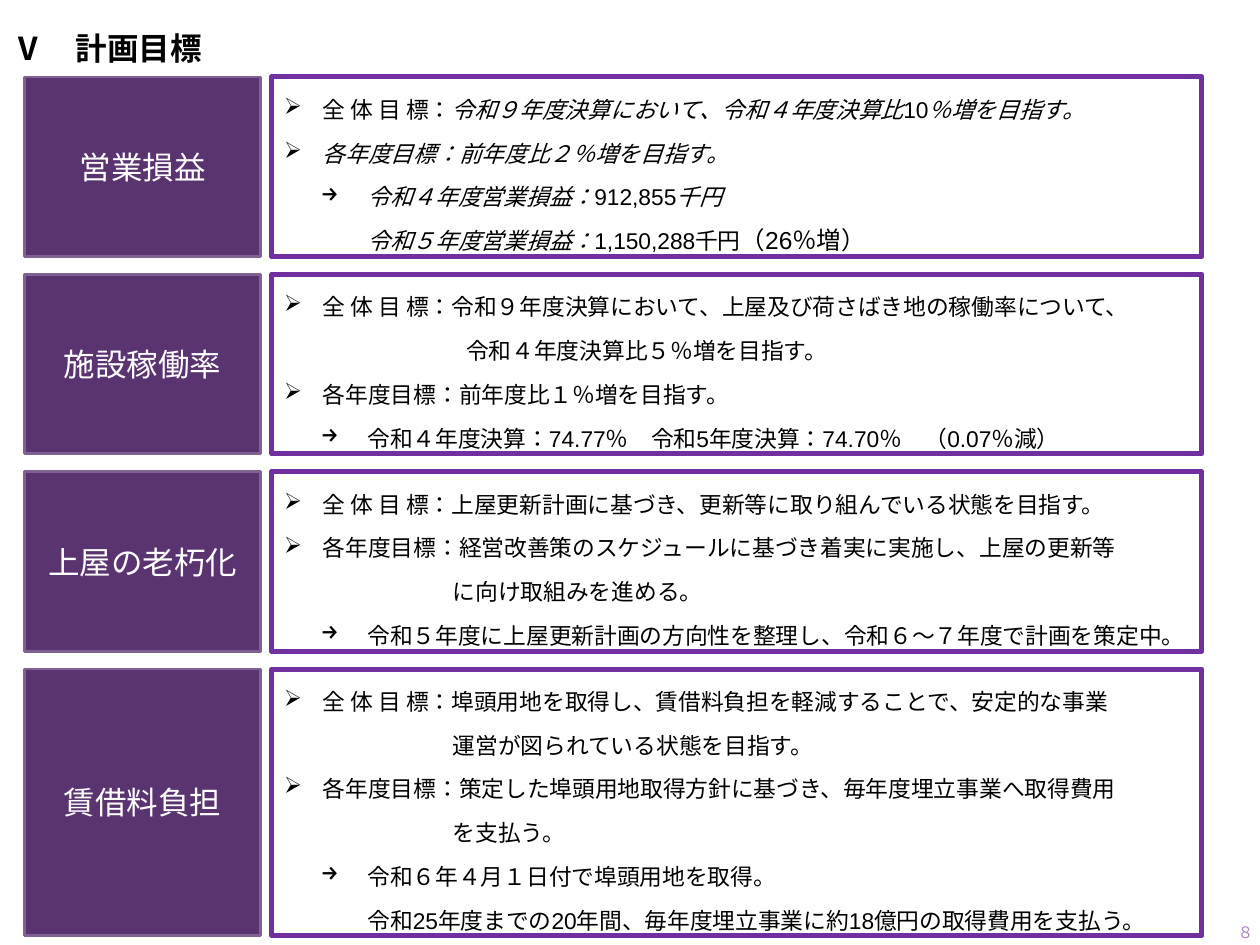
"""Build the plan targets slide: four topic labels, each beside a framed list of goals."""
from lxml.etree import SubElement
from pptx import Presentation
from pptx.dml.color import RGBColor
from pptx.enum.lang import MSO_LANGUAGE_ID
from pptx.enum.shapes import MSO_SHAPE
from pptx.enum.text import MSO_ANCHOR, MSO_AUTO_SIZE, PP_ALIGN
from pptx.oxml.ns import qn
from pptx.util import Cm, Pt

TITLE = "Ⅴ　計画目標"
PAGE_NUMBER = "８"
TOPICS = [
    {"label": "営業損益", "height": 3.62, "lines": [
        ("goal", [("全 体 目 標：", "body"),
                  ("令和９年度決算において、令和４年度決算比", "italic"),
                  ("10", "body"), ("％増を目指す。", "italic")]),
        ("goal", [("各年度目標：前年度比２％増を目指す。", "italic")]),
        ("step", [("令和４年度営業損益：", "italic"), ("912,855", "body"),
                  ("千円", "italic")]),
        ("more", [("令和５年度営業損益：", "italic"),
                  ("1,150,288千円", "body"), ("（26％増）", "large")]),
    ]},
    {"label": "施設稼働率", "height": 3.62, "lines": [
        ("goal", "全 体 目 標：令和９年度決算において、上屋及び荷さばき地の稼働率について、"),
        ("deep", "令和４年度決算比５％増を目指す。"),
        ("goal", "各年度目標：前年度比１％増を目指す。"),
        ("step", "令和４年度決算：74.77％　令和5年度決算：74.70％　（0.07％減）"),
    ]},
    {"label": "上屋の老朽化", "height": 3.62, "lines": [
        ("goal", "全 体 目 標：上屋更新計画に基づき、更新等に取り組んでいる状態を目指す。"),
        ("goal", "各年度目標：経営改善策のスケジュールに基づき着実に実施し、上屋の更新等"),
        ("wrap", "に向け取組みを進める。"),
        ("step", "令和５年度に上屋更新計画の方向性を整理し、令和６～７年度で計画を策定中。"),
    ]},
    {"label": "賃借料負担", "height": 5.37, "lines": [
        ("goal", "全 体 目 標：埠頭用地を取得し、賃借料負担を軽減することで、安定的な事業"),
        ("wrap", "運営が図られている状態を目指す。"),
        ("goal", "各年度目標：策定した埠頭用地取得方針に基づき、毎年度埋立事業へ取得費用"),
        ("wrap", "を支払う。"),
        ("step", "令和６年４月１日付で埠頭用地を取得。"),
        ("more", "令和25年度までの20年間、毎年度埋立事業に約18億円の取得費用を支払う。"),
    ]},
]

THEME = {
    "label_fill": "5A3471", "label_line": "806292", "frame_line": "7030A0",
    "text": {
        "title": {"name": "Arial", "size": 18, "bold": True, "color": "000000"},
        "label": {"name": "TeX Gyre Adventor", "size": 18, "color": "FFFFFF"},
        "page": {"name": "TeX Gyre Adventor", "size": 9, "color": "AD84C6"},
        "body": {"name": "Arial", "size": 13, "color": "000000"},
        "italic": {"name": "Arial", "size": 13, "italic": True, "color": "000000"},
        "large": {"name": "Arial", "size": 14, "color": "000000"},
    },
}
LINE_FORMATS = {
    "goal": {"margin": 0.78, "hanging": 0.78, "bullet": "➢"},
    "step": {"margin": 1.68, "hanging": 0.94, "bullet": "→"},
    "more": {"margin": 1.68},
    "wrap": {"margin": 3.4},
    "deep": {"margin": 3.67},
}
LABEL_LEFT, LABEL_WIDTH = 0.5, 4.75
FRAME_LEFT, FRAME_WIDTH = 5.48, 18.75
FIRST_TOP, ROW_GAP = 1.55, 0.36


def add_text(paragraph, text, style):
    run = paragraph.add_run()
    run.text = text
    run.font.language_id = MSO_LANGUAGE_ID.JAPANESE
    for name, value in THEME["text"][style].items():
        if name == "color":
            run.font.color.rgb = RGBColor.from_string(value)
        else:
            setattr(run.font, name, Pt(value) if name == "size" else value)


def format_frame(text_frame, **values):
    for name, value in {"word_wrap": True, "auto_size": MSO_AUTO_SIZE.NONE, **values}.items():
        setattr(text_frame, name, value)


def add_box(slide, left, top, width, height, line_color, line_width, fill=None):
    shape = slide.shapes.add_shape(
        MSO_SHAPE.RECTANGLE, Cm(left), Cm(top), Cm(width), Cm(height))
    shape.shadow.inherit = False
    if fill:
        shape.fill.solid()
        shape.fill.fore_color.rgb = RGBColor.from_string(fill)
    else:
        shape.fill.background()
    shape.line.color.rgb = RGBColor.from_string(line_color)
    shape.line.width = Pt(line_width)
    format_frame(shape.text_frame, vertical_anchor=MSO_ANCHOR.MIDDLE)
    return shape


def format_line(paragraph, margin, hanging=0, bullet=None):
    paragraph.alignment = PP_ALIGN.JUSTIFY
    paragraph.line_spacing = Pt(25)
    properties = paragraph._p.get_or_add_pPr()
    properties.set("marL", str(Cm(margin)))
    properties.set("indent", str(-Cm(hanging)))
    if bullet:
        SubElement(properties, qn("a:buChar")).set("char", bullet)


def add_topic(slide, topic, top):
    label = add_box(slide, LABEL_LEFT, top, LABEL_WIDTH, topic["height"],
                    THEME["label_line"], 1.5, THEME["label_fill"])
    paragraph = label.text_frame.paragraphs[0]
    paragraph.alignment = PP_ALIGN.CENTER
    add_text(paragraph, topic["label"], "label")

    frame = add_box(slide, FRAME_LEFT, top, FRAME_WIDTH, topic["height"],
                    THEME["frame_line"], 3)
    for index, (kind, content) in enumerate(topic["lines"]):
        text_frame = frame.text_frame
        paragraph = text_frame.add_paragraph() if index else text_frame.paragraphs[0]
        format_line(paragraph, **LINE_FORMATS[kind])
        runs = [(content, "body")] if isinstance(content, str) else content
        for text, style in runs:
            add_text(paragraph, text, style)


def main():
    presentation = Presentation()
    presentation.slide_width, presentation.slide_height = Cm(25.4), Cm(19.05)
    slide = presentation.slides.add_slide(presentation.slide_layouts[5])

    title = slide.shapes.title
    title_place = {"left": 0, "top": 0.46, "width": 21.9, "height": 2.82}
    for name, value in title_place.items():
        setattr(title, name, Cm(value))
    format_frame(title.text_frame, vertical_anchor=MSO_ANCHOR.TOP)
    paragraph = title.text_frame.paragraphs[0]
    paragraph.alignment = PP_ALIGN.LEFT
    add_text(paragraph, TITLE, "title")

    page = slide.shapes.add_textbox(Cm(24.1), Cm(18.29), Cm(1.42), Cm(1.02))
    format_frame(page.text_frame, vertical_anchor=MSO_ANCHOR.MIDDLE)
    paragraph = page.text_frame.paragraphs[0]
    paragraph.alignment = PP_ALIGN.RIGHT
    add_text(paragraph, PAGE_NUMBER, "page")

    top = FIRST_TOP
    for topic in TOPICS:
        add_topic(slide, topic, top)
        top += topic["height"] + ROW_GAP

    presentation.save("out.pptx")


if __name__ == "__main__":
    main()
